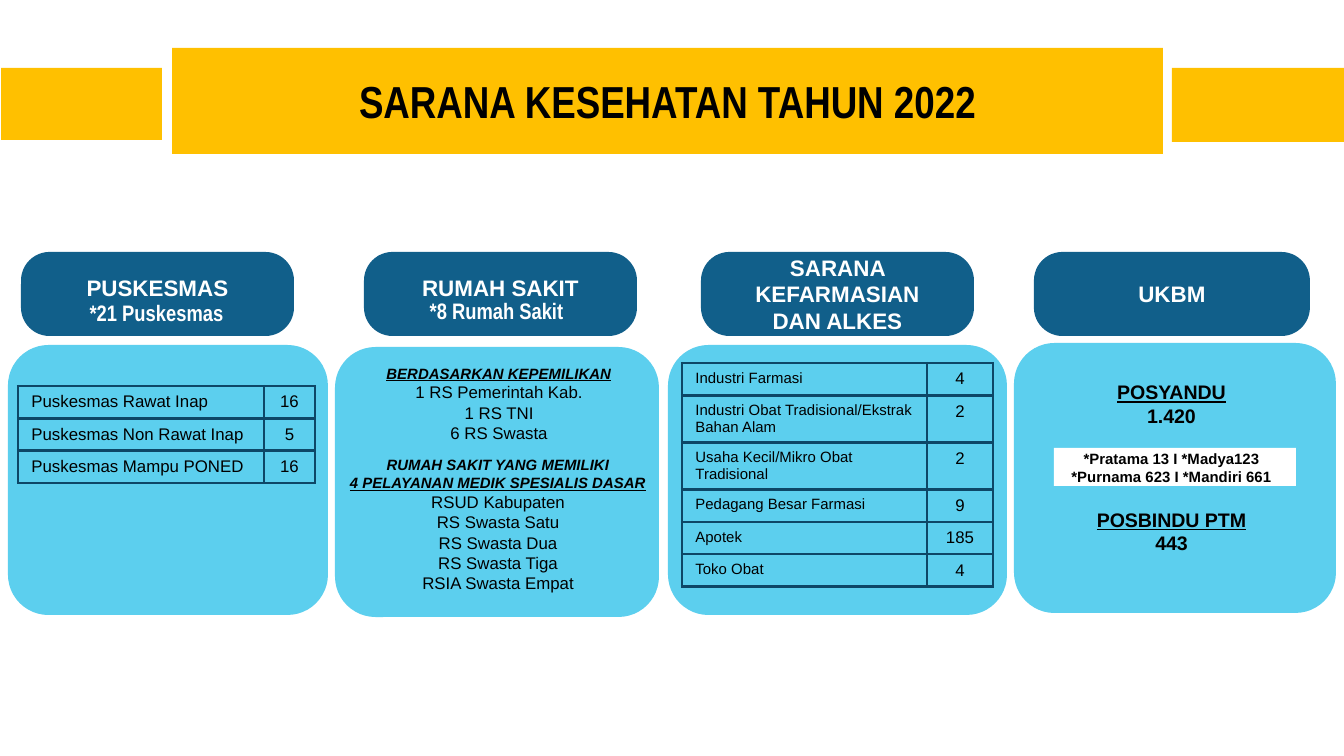
import dataclasses
from typing import Optional

import lxml.etree
import pptx
import pptx.dml.color
import pptx.enum.shapes
import pptx.enum.text
import pptx.oxml.ns
import pptx.util

RGB = pptx.dml.color.RGBColor
SHAPE = pptx.enum.shapes.MSO_SHAPE
MIDDLE = pptx.enum.text.MSO_ANCHOR.MIDDLE
CENTER = pptx.enum.text.PP_ALIGN.CENTER
LEFT = pptx.enum.text.PP_ALIGN.LEFT

WHITE = RGB(0xFF, 0xFF, 0xFF)
BLACK = RGB(0x00, 0x00, 0x00)
GOLD = RGB(0xFF, 0xC0, 0x00)
NAVY = RGB(0x11, 0x5F, 0x8A)
SKY = RGB(0x5C, 0xCF, 0xEE)
BORDER = RGB(0x0D, 0x47, 0x67)

SLIDE_WIDTH, SLIDE_HEIGHT = 1344, 756
EMU_PER_PX = 9144000 / SLIDE_WIDTH
INSET = 13
HEADER_TOP, HEADER_HEIGHT = 252, 84
PANEL_HEIGHT = 270


@dataclasses.dataclass(frozen=True)
class Box:
    left: int
    top: int
    width: int
    height: int


@dataclasses.dataclass(frozen=True)
class Line:
    text: str
    size: float = 9
    bold: bool = False
    italic: bool = False
    underline: bool = False
    color: RGB = BLACK
    font: str = "Arial"
    before: float = 0


@dataclasses.dataclass(frozen=True)
class Column:
    header_left: int
    header_width: int
    panel_left: int
    panel_top: int
    panel_width: int
    titles: tuple[str, ...]
    subtitle: Optional[str] = None
    subtitle_box: Optional[Box] = None


@dataclasses.dataclass(frozen=True)
class Grid:
    left: int
    top: int
    widths: tuple[int, int]
    label_size: float
    rows: tuple[tuple[str, str, int], ...]  # label, count, row height


COLUMNS = (
    Column(21, 273, 8, 345, 320, ("PUSKESMAS",), "*21 Puskesmas", Box(39, 299, 235, 27)),
    Column(364, 273, 335, 347, 324, ("RUMAH SAKIT",), "*8 Rumah Sakit", Box(379, 285, 235, 51)),
    Column(701, 273, 668, 345, 339, ("SARANA KEFARMASIAN", "DAN ALKES")),
    Column(1034, 276, 1014, 343, 322, ("UKBM",)),
)

GRIDS = (
    Grid(18, 386, (246, 51), 9, (
        ("Puskesmas Rawat Inap", "16", 32),
        ("Puskesmas Non Rawat Inap", "5", 32),
        ("Puskesmas Mampu PONED", "16", 32),
    )),
    Grid(682, 363, (245, 66), 8, (
        ("Industri Farmasi", "4", 32),
        ("Industri Obat Tradisional/Ekstrak Bahan Alam", "2", 47),
        ("Usaha Kecil/Mikro Obat Tradisional", "2", 47),
        ("Pedagang Besar Farmasi", "9", 32),
        ("Apotek", "185", 32),
        ("Toko Obat", "4", 32),
    )),
)

OWNERSHIP = (
    Line("BERDASARKAN KEPEMILIKAN", 8, True, True, True),
    Line("1 RS Pemerintah Kab."),
    Line("1 RS TNI"),
    Line("6 RS Swasta"),
)
SPECIALISTS = (
    Line("RUMAH SAKIT YANG MEMILIKI", 8, True, True),
    Line("4 PELAYANAN MEDIK SPESIALIS DASAR", 8, True, True, True),
    Line("RSUD Kabupaten"),
    Line("RS Swasta Satu"),
    Line("RS Swasta Dua"),
    Line("RS Swasta Tiga"),
    Line("RSIA Swasta Empat"),
)
COMMUNITY = (
    Line("POSYANDU", 10.5, True, underline=True),
    Line("1.420", 10.5, True),
    Line("*Pratama 13 I *Madya123", 8, True, before=12),
    Line("*Purnama 623 I *Mandiri 661", 8, True),
    Line("POSBINDU PTM", 10.5, True, underline=True, before=12),
    Line("443", 10.5, True),
)


def px(length: int) -> int:
    return round(length * EMU_PER_PX)


def place(box: Box) -> tuple[int, int, int, int]:
    return px(box.left), px(box.top), px(box.width), px(box.height)


def write(frame, lines, align=CENTER) -> None:
    for index, line in enumerate(lines):
        para = frame.paragraphs[0] if index == 0 else frame.add_paragraph()
        para.text = line.text
        para.alignment = align
        para.space_before = pptx.util.Pt(line.before)
        font = para.font
        font.name, font.size = line.font, pptx.util.Pt(line.size)
        font.bold, font.italic, font.underline = line.bold, line.italic, line.underline
        font.color.rgb = line.color


def set_frame(frame, bottom: int = INSET) -> None:
    frame.word_wrap = True
    frame.auto_size = pptx.enum.text.MSO_AUTO_SIZE.NONE
    frame.vertical_anchor = MIDDLE
    frame.margin_left = frame.margin_right = frame.margin_top = px(INSET)
    frame.margin_bottom = px(bottom)


def add_block(slide, box: Box, color: RGB, corner: Optional[float] = None):
    kind = SHAPE.RECTANGLE if corner is None else SHAPE.ROUNDED_RECTANGLE
    shape = slide.shapes.add_shape(kind, *place(box))
    if corner is not None:
        shape.adjustments[0] = corner
    shape.shadow.inherit = False
    shape.fill.solid()
    shape.fill.fore_color.rgb = color
    shape.line.fill.background()
    return shape


def add_text(slide, box: Box, lines) -> None:
    frame = slide.shapes.add_textbox(*place(box)).text_frame
    set_frame(frame)
    write(frame, lines)


def add_column(slide, column: Column) -> None:
    header = add_block(
        slide, Box(column.header_left, HEADER_TOP, column.header_width, HEADER_HEIGHT), NAVY, 0.34)
    # A taller bottom inset lifts the heading above its subtitle
    set_frame(header.text_frame, 2 * INSET if column.subtitle else INSET)
    write(header.text_frame, [Line(title, 12, True, color=WHITE) for title in column.titles])
    add_block(
        slide, Box(column.panel_left, column.panel_top, column.panel_width, PANEL_HEIGHT), SKY, 0.15)
    if column.subtitle:
        add_text(slide, column.subtitle_box,
                 [Line(column.subtitle, 12, True, color=WHITE, font="Arial Narrow")])


def set_borders(cell) -> None:
    properties = cell._tc.get_or_add_tcPr()
    for index, side in enumerate(("a:lnL", "a:lnR", "a:lnT", "a:lnB")):
        edge = lxml.etree.Element(pptx.oxml.ns.qn(side), w=str(pptx.util.Pt(1.5)))
        fill = lxml.etree.SubElement(edge, pptx.oxml.ns.qn("a:solidFill"))
        lxml.etree.SubElement(fill, pptx.oxml.ns.qn("a:srgbClr"), val=str(BORDER))
        properties.insert(index, edge)


def add_grid(slide, grid: Grid) -> None:
    box = Box(grid.left, grid.top, sum(grid.widths), sum(row[2] for row in grid.rows))
    table = slide.shapes.add_table(len(grid.rows), len(grid.widths), *place(box)).table
    table.first_row = table.horz_banding = False
    for column, width in zip(table.columns, grid.widths):
        column.width = px(width)
    for row, (label, count, height) in zip(table.rows, grid.rows):
        row.height = px(height)
        label_cell, count_cell = row.cells
        write(label_cell.text_frame, [Line(label, grid.label_size)], LEFT)
        write(count_cell.text_frame, [Line(count)])
        for cell in (label_cell, count_cell):
            cell.fill.background()
            set_borders(cell)


def main() -> None:
    deck = pptx.Presentation()
    deck.slide_width, deck.slide_height = px(SLIDE_WIDTH), px(SLIDE_HEIGHT)
    slide = deck.slides.add_slide(deck.slide_layouts[5])

    # Title banner with side bars
    title = slide.shapes.title
    title.left, title.top, title.width, title.height = place(Box(172, 48, 991, 106))
    title.fill.solid()
    title.fill.fore_color.rgb = GOLD
    set_frame(title.text_frame)
    write(title.text_frame, [Line("SARANA KESEHATAN TAHUN 2022", 24, True, font="Arial Narrow")])
    add_block(slide, Box(1, 68, 161, 72), GOLD)
    add_block(slide, Box(1172, 68, 172, 74), GOLD)

    # Four headed panels
    for column in COLUMNS:
        add_column(slide, column)

    # Panel contents
    for grid in GRIDS:
        add_grid(slide, grid)
    add_text(slide, Box(337, 378, 324, 51), OWNERSHIP)
    add_text(slide, Box(313, 499, 370, 51), SPECIALISTS)
    add_block(slide, Box(1054, 448, 242, 38), WHITE)
    add_text(slide, Box(1011, 372, 321, 191), COMMUNITY)

    deck.save("out.pptx")


if __name__ == "__main__":
    main()
